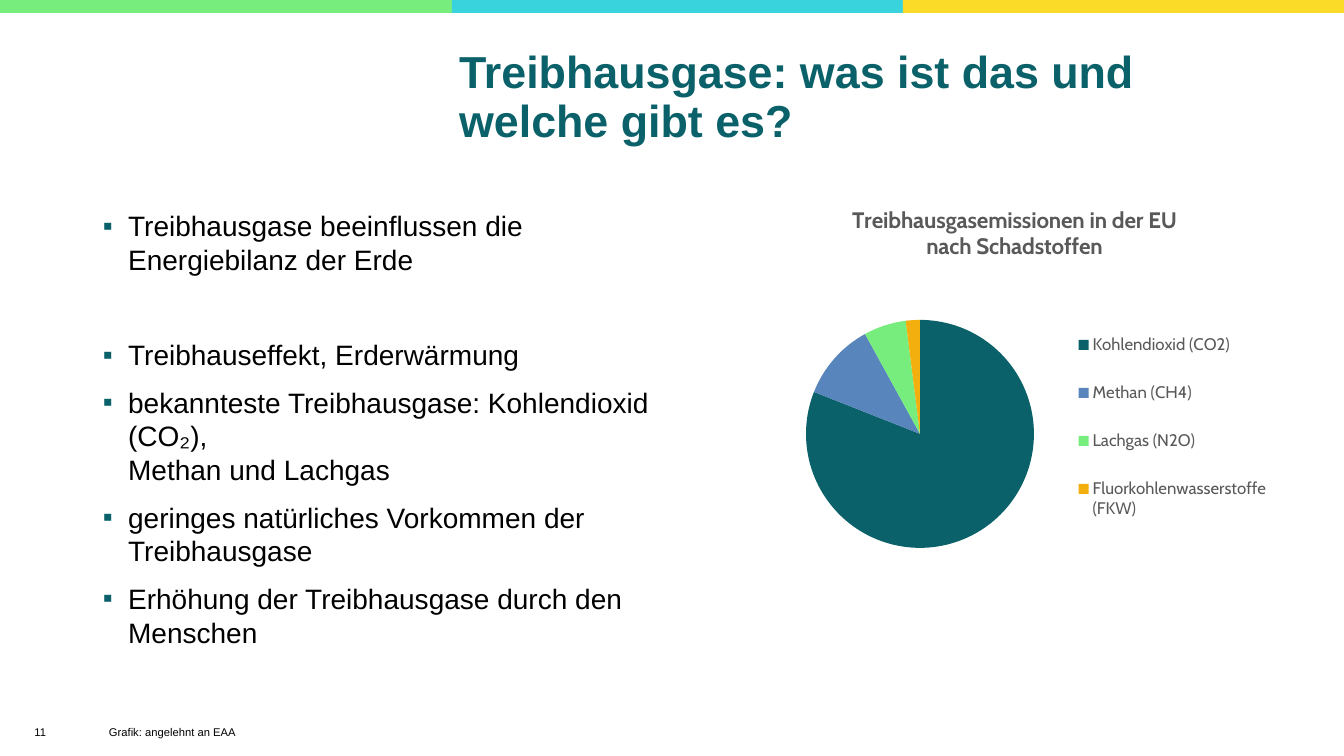
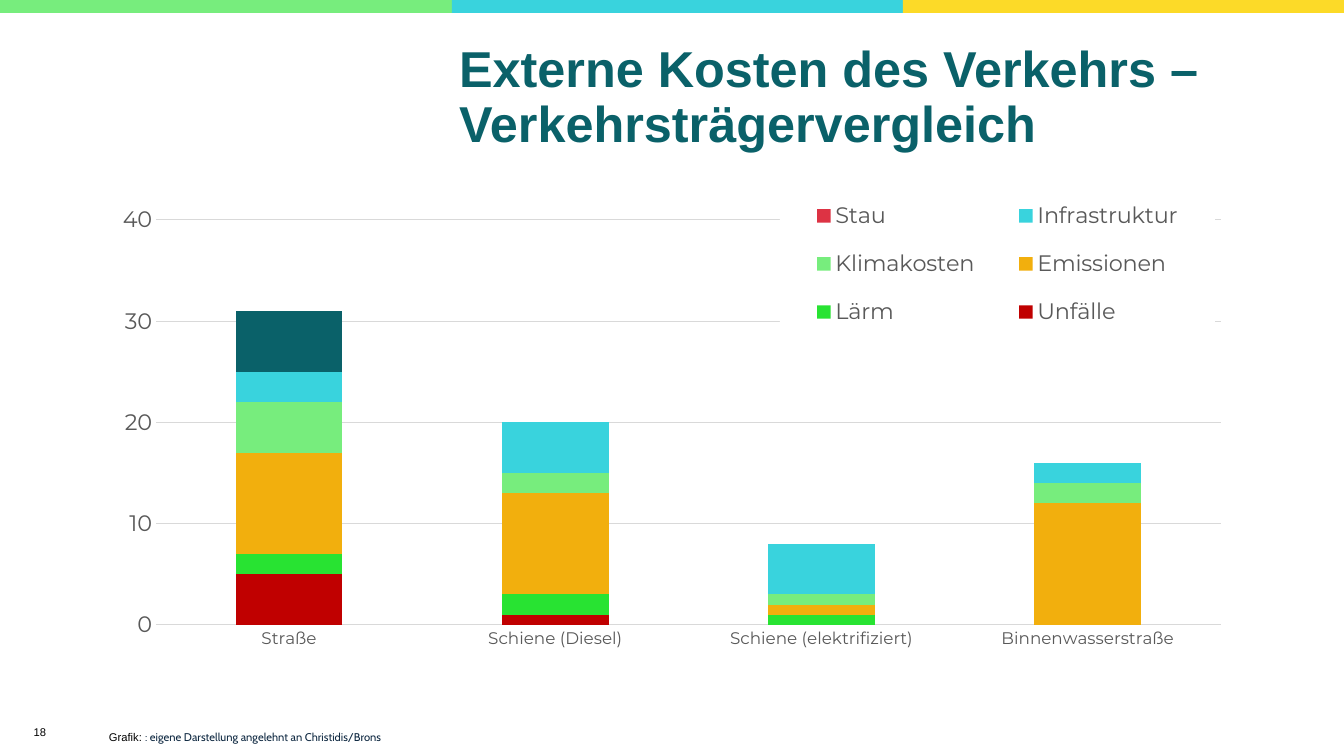
import pptx
import pptx.chart.data
import pptx.dml.color
import pptx.enum.chart
import pptx.enum.shapes
import pptx.enum.text
import pptx.oxml
import pptx.oxml.ns
import pptx.util

RGB = pptx.dml.color.RGBColor
BLACK, WHITE = RGB(0, 0, 0), RGB(255, 255, 255)
TEAL = RGB(0x0A, 0x61, 0x69)
GREEN = RGB(0x77, 0xED, 0x7D)
CYAN = RGB(0x39, 0xD3, 0xDD)
YELLOW = RGB(0xFC, 0xDA, 0x28)
BLUE = RGB(0x58, 0x85, 0xBC)
ORANGE = RGB(0xF2, 0xAF, 0x0D)
DARK_RED = RGB(0xC0, 0, 0)
BRIGHT_GREEN = RGB(0x28, 0xE3, 0x32)
RED = RGB(0xDD, 0x33, 0x44)
NAVY = RGB(0x0E, 0x28, 0x41)
GREY = RGB(0x59, 0x59, 0x59)
GRID = RGB(0xD9, 0xD9, 0xD9)

MSO_ANCHOR = pptx.enum.text.MSO_ANCHOR
PP_ALIGN = pptx.enum.text.PP_ALIGN
XL = pptx.enum.chart
qn = pptx.oxml.ns.qn
NS = pptx.oxml.ns.nsdecls("a", "c")
PX = 914400 / 100.8
TITLE_BOX = (449, 38, 849, 121)


def emu(*lengths):
    return [round(v * PX) for v in lengths]


def set_font(font, size, color, name="Arial", bold=None):
    font.size = pptx.util.Pt(size)
    font.color.rgb = color
    font.name = name
    font.bold = bold


def add_run(p, text, size, color=BLACK, name="Arial", bold=None):
    r = p.add_run()
    r.text = text
    set_font(r.font, size, color, name, bold)


def add_text_box(slide, box, anchor=MSO_ANCHOR.TOP):
    tf = slide.shapes.add_textbox(*emu(*box)).text_frame
    tf.word_wrap = True
    tf.vertical_anchor = anchor
    return tf


# Frame shared by all slides
def add_bands(slide, box):
    x, y, w, h = box
    edges = (0, 452, 903, w)
    for left, right, color in zip(edges, edges[1:], (GREEN, CYAN, YELLOW)):
        sp = slide.shapes.add_shape(pptx.enum.shapes.MSO_SHAPE.RECTANGLE,
                                    *emu(x + left, y, right - left, h))
        sp.shadow.inherit = False
        sp.fill.solid()
        sp.fill.fore_color.rgb = color
        sp.line.fill.background()


def add_title(slide, box, text, size):
    sp = slide.shapes.title
    sp.left, sp.top, sp.width, sp.height = emu(*box)
    tf = sp.text_frame
    tf.word_wrap = True
    tf.auto_size = pptx.enum.text.MSO_AUTO_SIZE.NONE
    tf.vertical_anchor = MSO_ANCHOR.MIDDLE
    p = tf.paragraphs[0]
    p.alignment = PP_ALIGN.LEFT
    p.line_spacing = 0.9
    add_run(p, text, size, TEAL, bold=True)


def add_framed_slide(prs, title, title_size, number):
    slide = prs.slides.add_slide(prs.slide_layouts.get_by_name("Title Only"))
    add_bands(slide, (0, 0, 1344, 13))
    add_title(slide, TITLE_BOX, title, title_size)
    p = add_text_box(slide, (7, 712, 49, 40), MSO_ANCHOR.MIDDLE).paragraphs[0]
    p.alignment = PP_ALIGN.RIGHT
    add_run(p, number, 8)
    return slide


def add_source(slide, box, *runs):
    p = add_text_box(slide, box).paragraphs[0]
    for text, color, name in runs:
        add_run(p, text, 8, color, name)


def add_bullets(slide, box, items):
    """Each item is (space before in points, lines)."""
    tf = add_text_box(slide, box)
    for i, (space, lines) in enumerate(items):
        p = tf.paragraphs[0] if i == 0 else tf.add_paragraph()
        p.space_before = pptx.util.Pt(space)
        pPr = p._p.get_or_add_pPr()
        pPr.set("marL", "228600")
        pPr.set("indent", "-228600")
        for tag in (f'<a:buClr {NS}><a:srgbClr val="{TEAL}"/></a:buClr>',
                    f'<a:buFont {NS} typeface="Arial"/>',
                    f'<a:buChar {NS} char="▪"/>'):
            pPr.append(pptx.oxml.parse_xml(tag))
        for j, line in enumerate(lines):
            if j:
                p.add_line_break()
            add_run(p, line, 20)


# Chart helpers
def set_layout(parent, after, chart_box, part_box, inner=False):
    """Place a chart part by a px box (or just x, y) within the chart."""
    for old in parent.findall(qn("c:layout")):
        parent.remove(old)
    parts = '<c:layoutTarget val="inner"/>' if inner else ""
    parts += '<c:xMode val="edge"/><c:yMode val="edge"/>'
    for key, length, whole in zip("xywh", part_box, chart_box[2:] * 2):
        parts += f'<c:{key} val="{length / whole}"/>'
    layout = pptx.oxml.parse_xml(
        f"<c:layout {NS}><c:manualLayout>{parts}</c:manualLayout></c:layout>")
    index = 0 if after is None else parent.index(parent.find(qn(after))) + 1
    parent.insert(index, layout)


def add_chart(slide, box, kind, categories, series, font, size, plot, legend):
    data = pptx.chart.data.CategoryChartData()
    data.categories = categories
    for name, values in series:
        data.add_series(name, values)
    chart = slide.shapes.add_chart(kind, *emu(*box), data).chart
    set_font(chart.font, size, GREY, font)
    chart.has_title = False
    chart.has_legend = True
    chart.legend.position = XL.XL_LEGEND_POSITION.RIGHT
    chart.legend.include_in_layout = False
    set_font(chart.legend.font, size, GREY, font)
    set_layout(chart._chartSpace.chart.plotArea, None, box, plot, inner=True)
    set_layout(chart.legend._element, "c:legendPos", box, legend)
    return chart


def fill(part, color):
    part.format.fill.solid()
    part.format.fill.fore_color.rgb = color


def add_gas_pie(slide, box):
    chart = add_chart(
        slide, box, XL.XL_CHART_TYPE.PIE,
        ("Kohlendioxid (CO2)", "Methan (CH4)", "Lachgas (N2O)",
         "Fluorkohlenwasserstoffe (FKW)"),
        [("Series 1", (81, 11, 6, 2))], "Cabin", 12,
        (52, 114, 228, 264), (316, 119, 205, 240))
    chart.plots[0].vary_by_categories = True
    for i, color in enumerate((TEAL, BLUE, GREEN, ORANGE)):
        fill(chart.plots[0].series[0].points[i], color)
    chart.has_title = True
    tf = chart.chart_title.text_frame
    for p, text in ((tf.paragraphs[0], "Treibhausgasemissionen in der EU"),
                    (tf.add_paragraph(), "nach Schadstoffen")):
        add_run(p, text, 16, GREY, "Cabin", True)
    set_layout(chart.chart_title._element, "c:tx", box, (95, 14))


def add_cost_columns(slide, box):
    series = (
        ("Unfälle", (5, 1, 0, 0), DARK_RED),
        ("Lärm", (2, 2, 1, 0), BRIGHT_GREEN),
        ("Emissionen", (10, 10, 1, 12), ORANGE),
        ("Klimakosten", (5, 2, 1, 2), GREEN),
        ("Infrastruktur", (3, 5, 5, 2), CYAN),
        ("Stau", (6, 0, 0, 0), RED),
    )
    chart = add_chart(
        slide, box, XL.XL_CHART_TYPE.COLUMN_STACKED,
        ("Straße", "Schiene (Diesel)", "Schiene (elektrifiziert)",
         "Binnenwasserstraße"),
        [s[:2] for s in series], "Montserrat", 16,
        (63, 62, 1065, 405), (687, 23, 435, 166))
    plot = chart.plots[0]
    plot.gap_width, plot.overlap = 150, 100
    plot.vary_by_categories = False
    for s, (_, _, color) in zip(plot.series, series):
        s.invert_if_negative = False
        fill(s, color)
    fill(plot.series[5].points[0], TEAL)

    # Axes
    cat, val = chart.category_axis, chart.value_axis
    for axis, size in ((cat, 12), (val, 16)):
        axis.major_tick_mark = axis.minor_tick_mark = XL.XL_TICK_MARK.NONE
        set_font(axis.tick_labels.font, size, GREY, "Montserrat")
    val.minimum_scale, val.maximum_scale, val.major_unit = 0, 40, 10
    val.tick_labels.number_format = "0"
    val.tick_labels.number_format_is_linked = False
    val.format.line.fill.background()
    val.has_major_gridlines = True
    for line in (cat.format.line, val.major_gridlines.format.line):
        line.color.rgb = GRID
        line.width = pptx.util.Pt(0.75)

    # White legend background over the gridlines
    chart.legend._element.find(qn("c:txPr")).addprevious(pptx.oxml.parse_xml(
        f'<c:spPr {NS}><a:solidFill><a:srgbClr val="{WHITE}"/></a:solidFill>'
        "<a:ln><a:noFill/></a:ln></c:spPr>"))


def build_gas_slide(prs):
    slide = add_framed_slide(
        prs, "Treibhausgase: was ist das und welche gibt es?", 32, "11")
    add_bullets(slide, (93, 204, 580, 459), (
        (0, ["Treibhausgase beeinflussen die Energiebilanz der Erde"]),
        (44, ["Treibhauseffekt, Erderwärmung"]),
        (10, ["bekannteste Treibhausgase: Kohlendioxid (CO₂),",
              "Methan und Lachgas"]),
        (10, ["geringes natürliches Vorkommen der Treibhausgase"]),
        (10, ["Erhöhung der Treibhausgase durch den Menschen"]),
    ))
    add_gas_pie(slide, (754, 188, 525, 437))
    add_source(slide, (99, 720, 216, 24),
               ("Grafik: angelehnt an EAA", BLACK, "Arial"))


def build_cost_slide(prs):
    slide = add_framed_slide(
        prs, "Externe Kosten des Verkehrs – Verkehrsträgervergleich", 36, "18")
    add_cost_columns(slide, (93, 158, 1159, 504))
    add_source(slide, (99, 725, 322, 24),
               ("Grafik: ", BLACK, "Arial"),
               (": eigene Darstellung angelehnt an Christidis/Brons",
                NAVY, "Cabin"))


def main():
    prs = pptx.Presentation()
    prs.slide_width, prs.slide_height = emu(1344, 756)
    build_gas_slide(prs)
    build_cost_slide(prs)
    prs.save("out.pptx")


if __name__ == "__main__":
    main()
